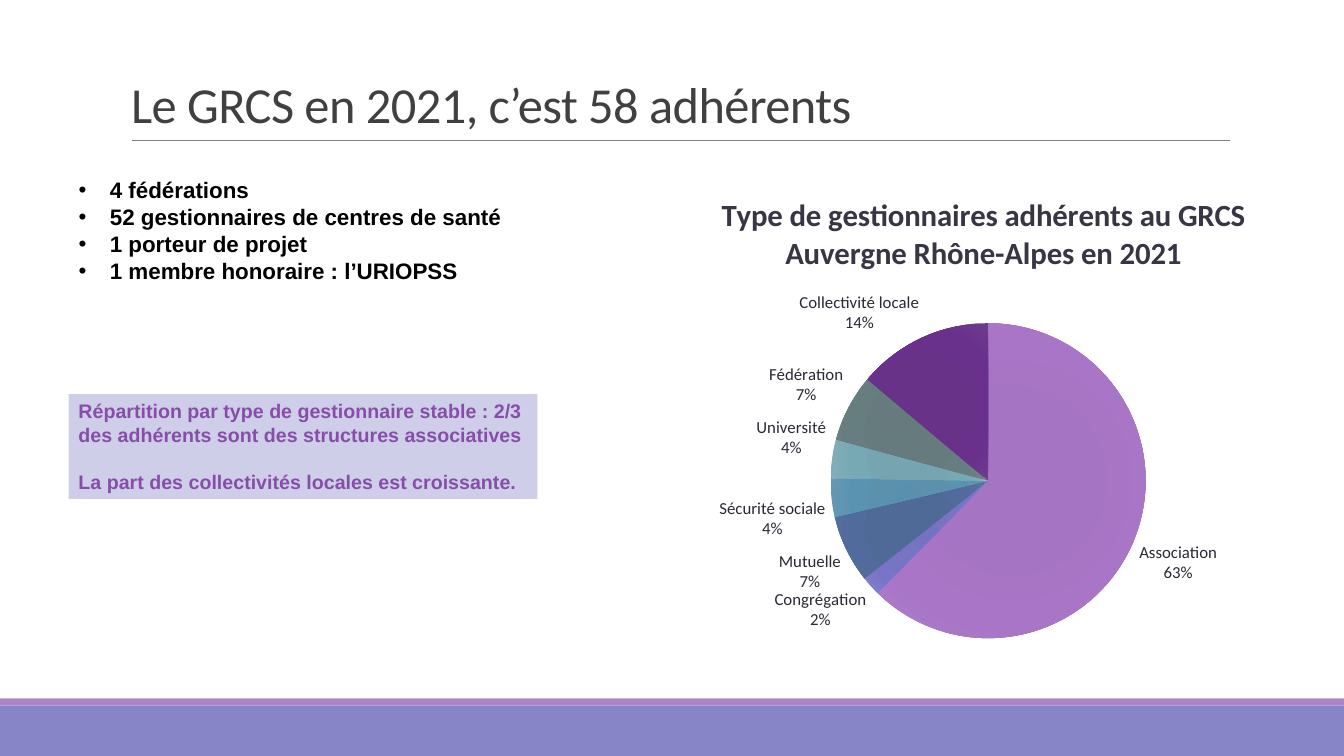
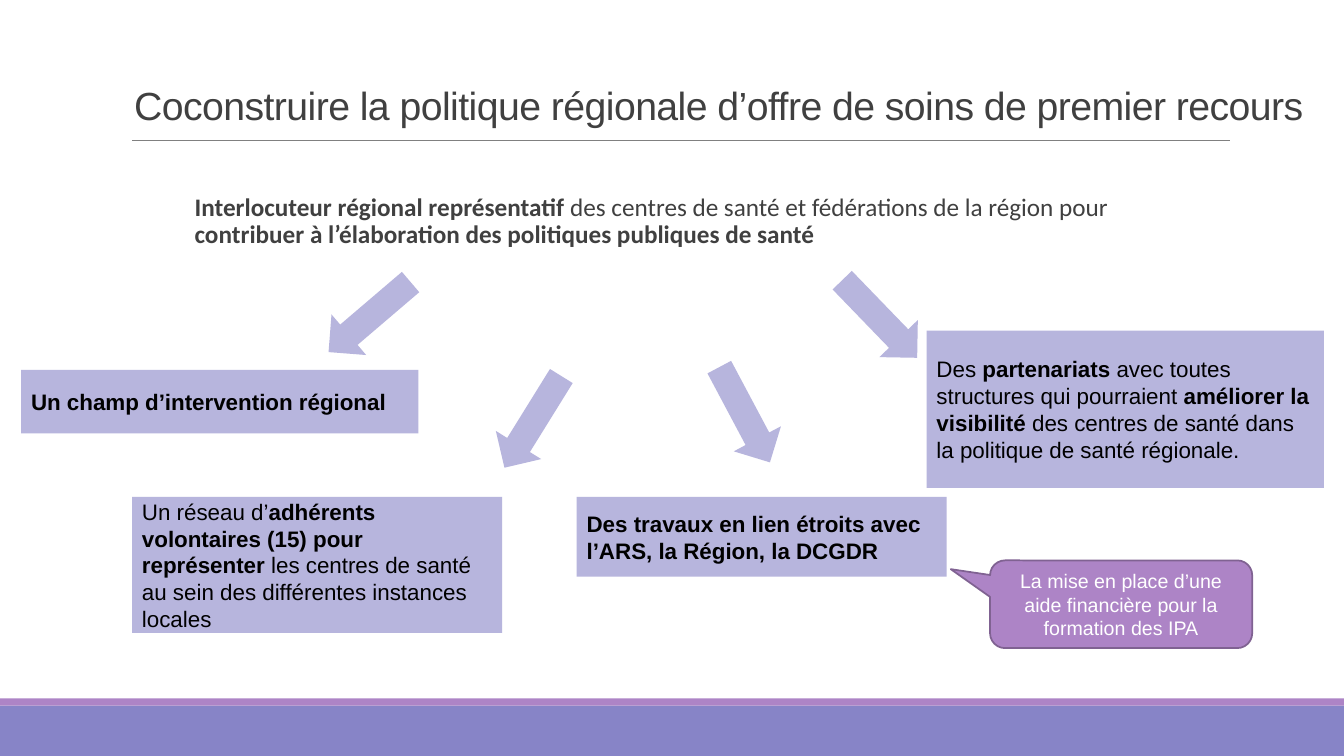
from lxml import etree
from pptx import Presentation
from pptx.chart.data import CategoryChartData
from pptx.dml.color import RGBColor
from pptx.enum.chart import XL_CHART_TYPE as ChartType, XL_LABEL_POSITION as LabelPosition
from pptx.enum.shapes import MSO_CONNECTOR as Connector, MSO_SHAPE as Shape
from pptx.enum.text import MSO_ANCHOR as Anchor, MSO_AUTO_SIZE as AutoSize, PP_ALIGN as Align
from pptx.oxml.ns import qn
from pptx.util import Inches, Pt

COLORS = {
    "band": "8784C7",
    "accent": "AD84C6",
    "accent_edge": "806292",
    "rule": "808080",
    "heading": "404040",
    "text": "000000",
    "white": "FFFFFF",
    "note_fill": "CFCEE9",
    "note_text": "874EA9",
    "box": "B7B5DD",
    "chart_text": "292834",
    "chart_title": "383545",
}
GRADIENT_STOPS = (0, 34, 70, 100)
MANAGERS = [
    ("Association", 63, ("A372C2", "A574C2", "A875C7", "AE81C9")),
    ("Congrégation", 2, ("7572C3", "7874C3", "7874C8", "8481CA")),
    ("Mutuelle", 7, ("4E6998", "506A98", "506B9C", "5A729D")),
    ("Sécurité sociale", 4, ("5890AD", "5B91AD", "5A93B1", "6698B3")),
    ("Université", 4, ("74A4B1", "76A5B1", "77A9B5", "82AEB9")),
    ("Fédération", 7, ("657A7D", "667B7E", "677E80", "6E8284")),
    ("Collectivité locale", 14, ("673088", "683288", "69318C", "6D3B8B")),
]


def rgb(name):
    """Return the palette colour with this name."""
    return RGBColor.from_string(COLORS[name])


def format_font(font, size, color, name="Arial", bold=False):
    """Set the size, colour, typeface and weight of a font."""
    font.size, font.name, font.bold = Pt(size), name, bold
    font.color.rgb = rgb(color)


def place(shape, box):
    """Move and size a shape to a box given in inches."""
    shape.left, shape.top, shape.width, shape.height = map(Inches, box)


def write_runs(paragraph, parts, size, color, name="Arial"):
    """Fill a paragraph with (text, bold) parts."""
    for text, bold in parts:
        run = paragraph.add_run()
        run.text = text
        format_font(run.font, size, color, name, bold)


def set_bullet(paragraph, margin, indent, character=None):
    """Give a paragraph its indents and its bullet, if any."""
    properties = paragraph._p.get_or_add_pPr()
    properties.set("marL", str(Inches(margin)))
    properties.set("indent", str(Inches(indent)))
    if character:
        etree.SubElement(properties, qn("a:buChar")).set("char", character)
    else:
        etree.SubElement(properties, qn("a:buNone"))


def add_block(slide, kind, box, fill, edge=None):
    """Add a flat filled shape, with an optional outline."""
    shape = slide.shapes.add_shape(kind, *map(Inches, box))
    shape.shadow.inherit = False
    shape.fill.solid()
    shape.fill.fore_color.rgb = rgb(fill)
    if edge:
        shape.line.color.rgb = rgb(edge)
        shape.line.width = Pt(1.25)
    else:
        shape.line.fill.background()
    return shape


def add_text_block(slide, box, paragraphs, fill, size, color, anchor=Anchor.MIDDLE,
                   kind=Shape.RECTANGLE, edge=None, align=Align.LEFT, gap=0):
    """Add a filled shape holding paragraphs made of (text, bold) parts."""
    shape = add_block(slide, kind, box, fill, edge)
    frame = shape.text_frame
    frame.word_wrap = True
    frame.vertical_anchor = anchor
    for index, parts in enumerate(paragraphs):
        paragraph = frame.add_paragraph() if index else frame.paragraphs[0]
        paragraph.alignment = align
        if index:
            paragraph.space_before = Pt(gap)
        write_runs(paragraph, parts, size, color)
    return shape


def start_slide(presentation, title, box, size, font_name):
    """Add a slide with the shared bands, rule and title style."""
    slide = presentation.slides.add_slide(presentation.slide_layouts[1])
    add_block(slide, Shape.RECTANGLE, (0, 7, 13.33, 0.5), "band")
    add_block(slide, Shape.RECTANGLE, (0, 6.93, 13.33, 0.07), "accent")
    ends = map(Inches, (1.31, 1.39, 12.2, 1.39))
    rule = slide.shapes.add_connector(Connector.STRAIGHT, *ends)
    rule.line.color.rgb = rgb("rule")
    rule.line.width = Pt(0.5)
    etree.SubElement(rule._element.spPr, qn("a:effectLst"))

    heading = slide.shapes.title
    place(heading, box)
    frame = heading.text_frame
    frame.text = title
    frame.word_wrap = True
    frame.auto_size = AutoSize.NONE
    frame.vertical_anchor = Anchor.BOTTOM
    paragraph = frame.paragraphs[0]
    paragraph.alignment = Align.LEFT
    paragraph.line_spacing = 0.85
    run = paragraph.runs[0]
    format_font(run.font, size, "heading", font_name)
    run._r.get_or_add_rPr().set("spc", "-40")
    return slide


def fill_member_list(slide, box, items):
    """Write the bold bulleted list in the body placeholder."""
    body = slide.placeholders[1]
    place(body, box)
    frame = body.text_frame
    frame.auto_size = AutoSize.NONE
    for index, item in enumerate(items):
        paragraph = frame.add_paragraph() if index else frame.paragraphs[0]
        set_bullet(paragraph, 0.31, -0.31, "•")
        paragraph.space_before = Pt(0)
        write_runs(paragraph, [(item, True)], 16, "text")


def fill_introduction(slide, box, parts):
    """Write the opening sentence in the body placeholder."""
    body = slide.placeholders[1]
    place(body, box)
    frame = body.text_frame
    frame.auto_size = AutoSize.NONE
    frame.margin_left = frame.margin_right = 0
    paragraph = frame.paragraphs[0]
    set_bullet(paragraph, 0.07, 0)
    paragraph.space_before = Pt(0)
    paragraph.line_spacing = 0.9
    write_runs(paragraph, parts, 18, "heading", "Calibri")


def set_layout(parent, position, **values):
    """Give a chart part a manual layout in fractions of the chart."""
    for old in parent.findall(qn("c:layout")):
        parent.remove(old)
    layout = etree.Element(qn("c:layout"))
    manual = etree.SubElement(layout, qn("c:manualLayout"))
    if "w" in values:
        etree.SubElement(manual, qn("c:layoutTarget")).set("val", "inner")
    for axis in "xy":
        etree.SubElement(manual, qn(f"c:{axis}Mode")).set("val", "edge")
    for key, value in values.items():
        etree.SubElement(manual, qn(f"c:{key}")).set("val", str(value))
    parent.insert(position, layout)


def fill_slice(point, colors):
    """Fill a pie slice with a circular gradient."""
    properties = point.format.fill._xPr
    gradient = etree.Element(qn("a:gradFill"))
    stops = etree.SubElement(gradient, qn("a:gsLst"))
    for position, color in zip(GRADIENT_STOPS, colors):
        stop = etree.SubElement(stops, qn("a:gs"))
        stop.set("pos", str(position * 1000))
        etree.SubElement(stop, qn("a:srgbClr")).set("val", color)
    circle = etree.SubElement(gradient, qn("a:path"))
    circle.set("path", "circle")
    target = etree.SubElement(circle, qn("a:fillToRect"))
    for side in "ltrb":
        target.set(side, "100000")
    properties.insert(0, gradient)


def add_manager_pie(slide, box):
    """Add the pie of member types with its title and labels."""
    data = CategoryChartData()
    data.categories = [name for name, _, _ in MANAGERS]
    data.add_series("Series 1", [share for _, share, _ in MANAGERS])
    frame = slide.shapes.add_chart(ChartType.PIE, *map(Inches, box), data)
    chart = frame.chart
    chart.has_legend = False
    format_font(chart.font, 10, "text", "Calibri")

    chart.has_title = True
    title = chart.chart_title
    title.include_in_layout = False
    title.text_frame.text = "Type de gestionnaires adhérents au GRCS Auvergne Rhône-Alpes en 2021"
    format_font(title.text_frame.paragraphs[0].runs[0].font, 22, "chart_title", "Calibri", True)
    set_layout(title._element, 1, x=0.14, y=0.05)

    plot = chart.plots[0]
    plot.vary_by_categories = True
    set_layout(chart._chartSpace.chart.plotArea, 0, x=0.3, y=0.32, w=0.45, h=0.63)
    for index, (_, _, colors) in enumerate(MANAGERS):
        fill_slice(plot.series[0].points[index], colors)

    plot.has_data_labels = True
    labels = plot.data_labels
    labels.show_category_name = labels.show_value = True
    labels.show_percentage = False
    labels.number_format = '0"%"'
    labels.number_format_is_linked = False
    labels.position = LabelPosition.OUTSIDE_END
    format_font(labels.font, 12, "chart_text", "Calibri")
    separator = etree.Element(qn("c:separator"))
    separator.text = "\n"
    labels._element.find(qn("c:showBubbleSize")).addnext(separator)


def build_members_slide(presentation):
    """Build the slide on the 58 members."""
    slide = start_slide(presentation, "Le GRCS en 2021, c’est 58 adhérents",
                        (1.2, 0.31, 11, 1.07), 36, "Calibri")
    add_manager_pie(slide, (6.12, 1.62, 7.01, 4.96))
    fill_member_list(slide, (0.68, 1.7, 5.04, 1.45), [
        "4 fédérations",
        "52 gestionnaires de centres de santé",
        "1 porteur de projet",
        "1 membre honoraire : l’URIOPSS",
    ])
    add_text_block(slide, (0.68, 3.91, 4.65, 1.04), [
        [("Répartition par type de gestionnaire stable : 2/3 des adhérents "
          "sont des structures associatives", True)],
        [("La part des collectivités locales est croissante.", True)],
    ], "note_fill", 14, "note_text", Anchor.TOP, gap=17)


def build_policy_slide(presentation):
    """Build the slide on regional health policy."""
    slide = start_slide(
        presentation,
        "Coconstruire la politique régionale d’offre de soins de premier recours",
        (1.23, 0.28, 12.02, 1.05), 28, "Arial")
    fill_introduction(slide, (1.86, 1.88, 9.82, 3.74), [
        ("Interlocuteur régional représentatif", True),
        (" des centres de santé et fédérations de la région pour ", False),
        ("contribuer à l’élaboration des politiques publiques de santé", True),
    ])
    arrows = [(3.13, 2.88, 139.5), (4.75, 3.92, 121.8), (6.85, 3.85, 62), (8.19, 2.9, 46)]
    for left, top, angle in arrows:
        arrow = add_block(slide, Shape.RIGHT_ARROW, (left, top, 1.07, 0.53), "box")
        arrow.rotation = angle
    missions = [
        ((0.21, 3.67, 3.94, 0.63), [("Un champ d’intervention régional", True)]),
        ((1.31, 4.93, 3.67, 1.35), [
            ("Un réseau d’", False),
            ("adhérents volontaires (15) pour représenter ", True),
            ("les centres de santé au sein des différentes instances locales", False),
        ]),
        ((9.19, 3.28, 3.94, 1.56), [
            ("Des ", False),
            ("partenariats", True),
            (" avec toutes structures qui pourraient ", False),
            ("améliorer la visibilité ", True),
            ("des centres de santé dans la politique de santé régionale.", False),
        ]),
        ((5.72, 4.93, 3.67, 0.79), [
            ("Des travaux en lien étroits avec l’ARS, la Région, la DCGDR", True),
        ]),
    ]
    for box, parts in missions:
        add_text_block(slide, box, [parts], "box", 16, "text")
    callout = add_text_block(
        slide, (9.82, 5.56, 2.6, 0.87),
        [[("La mise en place d’une aide financière pour la formation des IPA", False)]],
        "accent", 14, "white", kind=Shape.ROUNDED_RECTANGULAR_CALLOUT,
        edge="accent_edge", align=Align.CENTER)
    for index, value in enumerate((-0.65, -0.4, 0.17)):
        callout.adjustments[index] = value


def main():
    """Build and save the presentation."""
    presentation = Presentation()
    presentation.slide_width, presentation.slide_height = Inches(13.33), Inches(7.5)
    build_members_slide(presentation)
    build_policy_slide(presentation)
    presentation.save("out.pptx")


if __name__ == "__main__":
    main()
